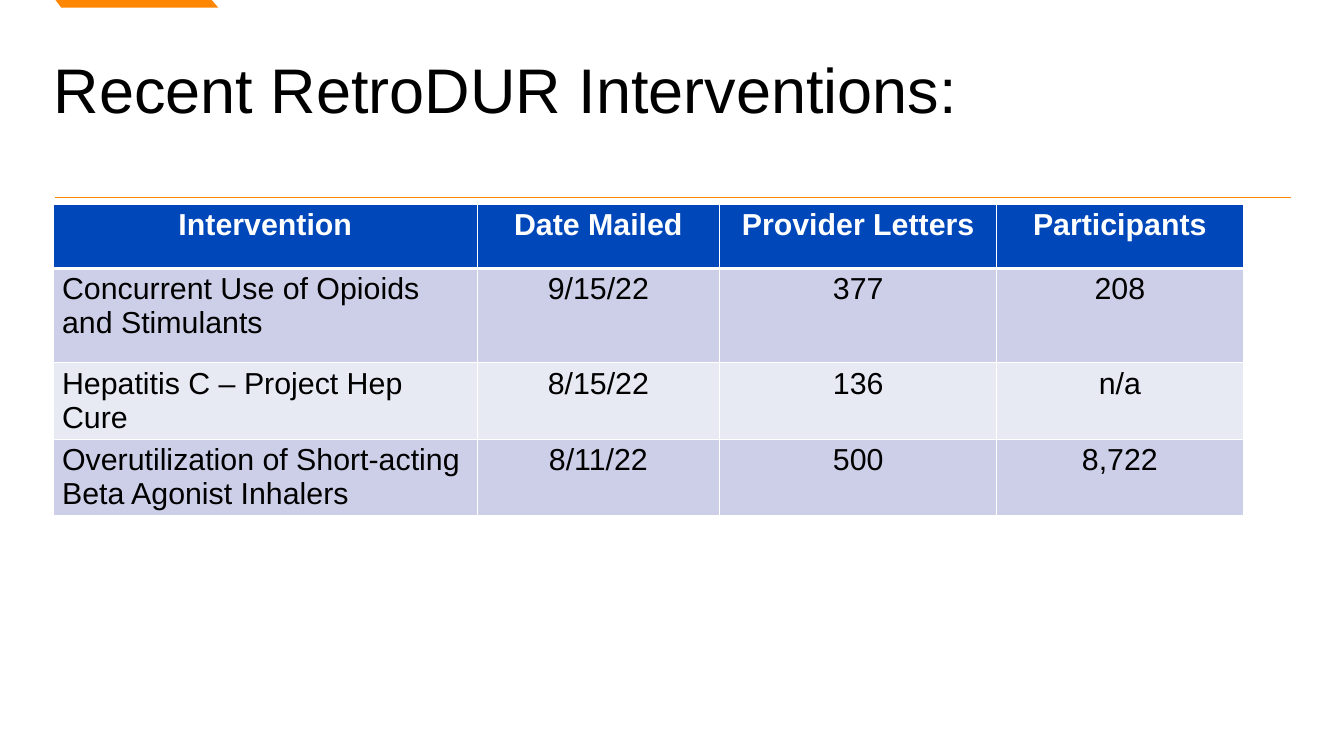
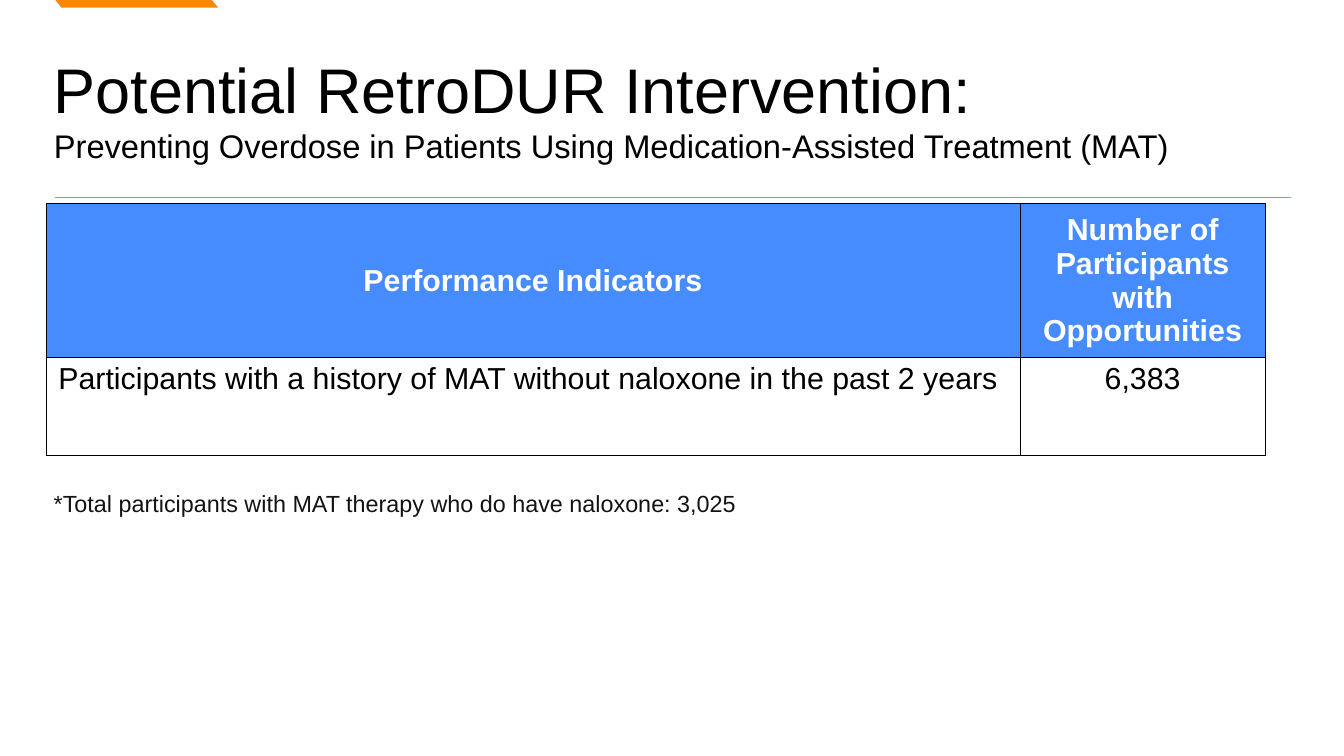
from lxml import etree
from pptx import Presentation
from pptx.dml.color import RGBColor
from pptx.enum import shapes, text
from pptx.oxml import ns
from pptx.util import Pt

LEFT, CENTER = text.PP_ALIGN.LEFT, text.PP_ALIGN.CENTER
TOP, MIDDLE = text.MSO_ANCHOR.TOP, text.MSO_ANCHOR.MIDDLE


def color(value):
    return RGBColor.from_string(value)


class Slides:
    font = "Arial"
    accent = "FF8700"
    black = "000000"
    white = "FFFFFF"

    def __init__(self):
        self.deck = Presentation()
        self.deck.slide_width = Pt(1152)
        self.deck.slide_height = Pt(648)
        self.page = None

    def add_page(self, title, subtitle=None):
        self.page = self.deck.slides.add_slide(self.deck.slide_layouts[5])
        self.add_rule()
        self.add_tab()
        self.set_title(title, subtitle)

    def add_rule(self):
        rule = self.page.shapes.add_connector(
            shapes.MSO_CONNECTOR.STRAIGHT, Pt(47.5), Pt(169), Pt(1106.5), Pt(169))
        rule.line.color.rgb = color(self.accent)
        rule.line.width = Pt(1)
        etree.SubElement(rule._element.spPr, ns.qn("a:effectLst"))

    def add_tab(self):
        outline = self.page.shapes.build_freeform(Pt(47.5), Pt(0), scale=1.0)
        corners = [(52.5, 6.5), (187, 6.5), (181.5, 0)]
        outline.add_line_segments([(Pt(x), Pt(y)) for x, y in corners])
        tab = outline.convert_to_shape()
        tab.shadow.inherit = False
        tab.fill.solid()
        tab.fill.fore_color.rgb = color(self.accent)
        tab.line.fill.background()

    def style(self, para, size, ink, bold=False, align=LEFT):
        para.alignment = align
        para.font.name = self.font
        para.font.size = Pt(size)
        para.font.bold = bold
        para.font.color.rgb = color(ink)

    def set_title(self, title, subtitle):
        box = self.page.shapes.title
        box.left, box.top, box.width, box.height = Pt(39), Pt(34), Pt(1069), Pt(108)
        frame = box.text_frame
        frame.auto_size = text.MSO_AUTO_SIZE.NONE
        frame.word_wrap = True
        frame.vertical_anchor = TOP
        frame.margin_top = Pt(9)
        para = frame.paragraphs[0]
        self.style(para, 54, self.black)
        para.add_run().text = title
        if subtitle:
            para.add_line_break()
            span = para.add_run()
            span.text = subtitle
            span.font.size = Pt(28)

    def add_note(self, words, left, top, width, height):
        box = self.page.shapes.add_textbox(Pt(left), Pt(top), Pt(width), Pt(height))
        box.text_frame.word_wrap = True
        para = box.text_frame.paragraphs[0]
        para.text = words
        self.style(para, 20, "141313")

    def add_table(self, left, top, widths, heights, rows, header_fill, body_fills,
                  border, line_width, header_line, aligns, header_anchor=TOP):
        table = self.page.shapes.add_table(
            len(rows), len(widths), Pt(left), Pt(top),
            Pt(sum(widths)), Pt(sum(heights))).table
        for column, width in zip(table.columns, widths):
            column.width = Pt(width)
        for index, words in enumerate(rows):
            table.rows[index].height = Pt(heights[index])
            header = index == 0
            fill = header_fill if header else body_fills[(index - 1) % len(body_fills)]
            lines = {"L": line_width, "R": line_width,
                     "T": header_line if index == 1 else line_width,
                     "B": header_line if header else line_width}
            for number, value in enumerate(words):
                cell = table.cell(index, number)
                cell.vertical_anchor = header_anchor if header else TOP
                para = cell.text_frame.paragraphs[0]
                para.text = value
                self.style(para, 26, self.white if header else self.black, header,
                           CENTER if header else aligns[number])
                self.paint(cell, fill)
                self.set_borders(cell, border, lines)

    def paint(self, cell, fill):
        if fill:
            cell.fill.solid()
            cell.fill.fore_color.rgb = color(fill)
        else:
            cell.fill.background()

    def set_borders(self, cell, ink, lines):
        properties = cell._tc.get_or_add_tcPr()
        for place, (side, width) in enumerate(lines.items()):
            line = etree.Element(ns.qn(f"a:ln{side}"), w=str(Pt(width)))
            solid = etree.SubElement(line, ns.qn("a:solidFill"))
            etree.SubElement(solid, ns.qn("a:srgbClr"), val=ink)
            properties.insert(place, line)


def main():
    slides = Slides()

    slides.add_page("Recent RetroDUR Interventions:")
    slides.add_table(
        46, 175, [363, 208, 237.5, 211], [55, 81, 60.5, 60.5],
        [["Intervention", "Date Mailed", "Provider Letters", "Participants"],
         ["Concurrent Use of Opioids and Stimulants", "9/15/22", "377", "208"],
         ["Hepatitis C – Project Hep Cure", "8/15/22", "136", "n/a"],
         ["Overutilization of Short-acting Beta Agonist Inhalers",
          "8/11/22", "500", "8,722"]],
        header_fill="0047BA", body_fills=["CCCFE7", "E7E9F3"],
        border=slides.white, line_width=1, header_line=3,
        aligns=[LEFT, CENTER, CENTER, CENTER])

    slides.add_page(
        "Potential RetroDUR Intervention:",
        "Preventing Overdose in Patients Using Medication-Assisted Treatment (MAT)")
    slides.add_note("*Total participants with MAT therapy who do have naloxone: 3,025",
                    39, 416, 1066, 32)
    slides.add_table(
        39.5, 174.5, [835, 210], [122.5, 84],
        [["Performance Indicators", "Number of Participants with Opportunities"],
         ["Participants with a history of MAT without naloxone in the past 2 years ",
          "6,383"]],
        header_fill="468CFF", body_fills=[None],
        border=slides.black, line_width=0.75, header_line=0.75,
        aligns=[CENTER, CENTER], header_anchor=MIDDLE)

    slides.deck.save("out.pptx")


if __name__ == "__main__":
    main()
